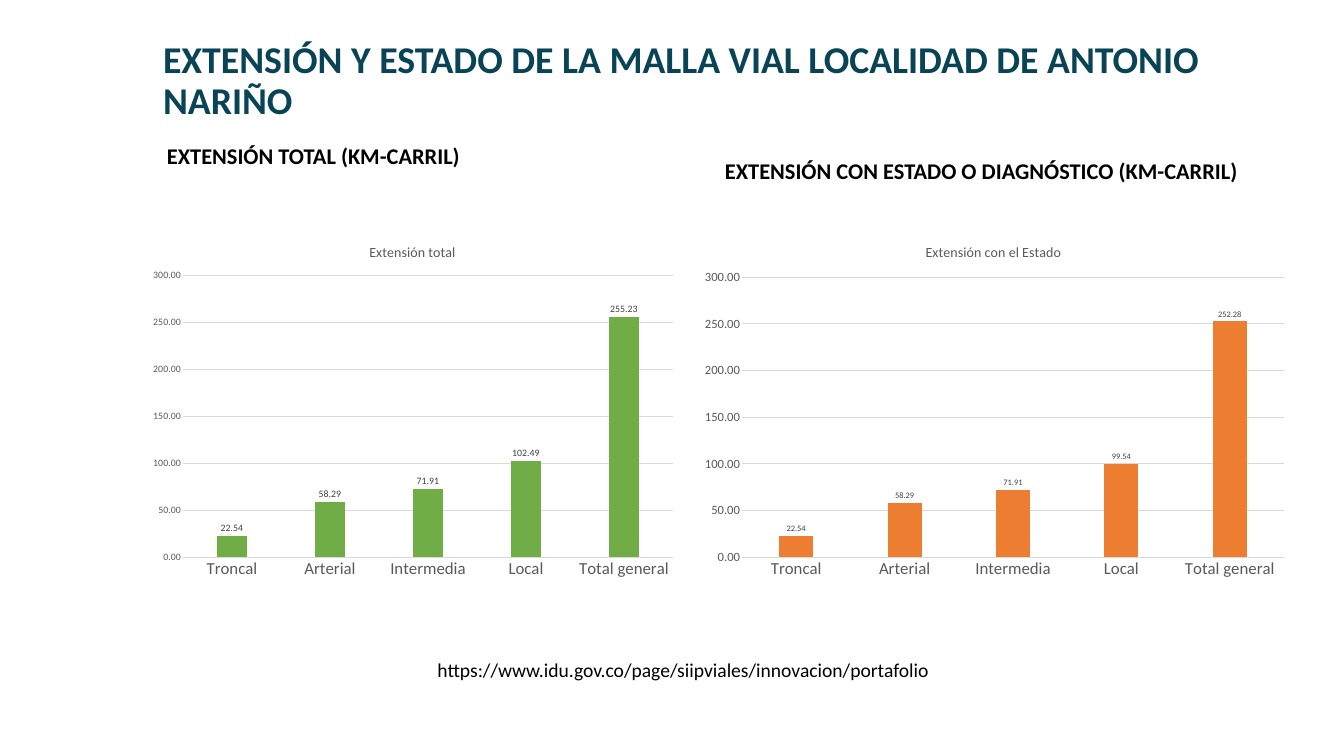
from lxml import etree
from pptx import Presentation
from pptx.chart.data import CategoryChartData
from pptx.dml.color import RGBColor
from pptx.enum.chart import XL_CHART_TYPE, XL_LABEL_POSITION, XL_TICK_MARK
from pptx.enum.text import MSO_ANCHOR, MSO_AUTO_SIZE, PP_ALIGN
from pptx.util import Emu, Pt

COLUMN = XL_CHART_TYPE.COLUMN_CLUSTERED
OUTSIDE = XL_LABEL_POSITION.OUTSIDE_END
NO_TICK = XL_TICK_MARK.NONE
MIDDLE, TOP = MSO_ANCHOR.MIDDLE, MSO_ANCHOR.TOP
LEFT, CENTER = PP_ALIGN.LEFT, PP_ALIGN.CENTER
NO_FIT = MSO_AUTO_SIZE.NONE

SCALE = 914400 / 50.4
SIZE = (1344, 756)
FORMAT = "#,##0.00"

THEME = {
    "font": "Calibri",
    "title": {"size": 54, "color": "094456", "bold": True},
    "head": {"size": 32, "color": "000000", "bold": True},
    "link": {"size": 28, "color": "000000", "bold": False},
    "name": {"size": 20, "color": "595959", "bold": False},
    "cats": {"size": 24, "color": "595959", "bold": False},
    "line": "D9D9D9",
    "scale": "595959",
    "label": "404040",
}

TITLE = ("EXTENSIÓN Y ESTADO DE LA MALLA VIAL LOCALIDAD DE ANTONIO NARIÑO",
         (158, 48, 1138, 68))
TEXTS = [
    ("EXTENSIÓN TOTAL (KM-CARRIL)", (162, 140, 352, 32), "head", LEFT),
    ("EXTENSIÓN CON ESTADO O DIAGNÓSTICO (KM-CARRIL)",
     (720, 155, 632, 32), "head", LEFT),
    ("https://www.idu.gov.co/page/siipviales/innovacion/portafolio",
     (311, 655, 744, 29), "link", CENTER),
]
CATS = ["Troncal", "Arterial", "Intermedia", "Local", "Total general"]
CHARTS = [
    {"name": "Extensión total", "vals": [22.54, 58.29, 71.91, 102.49, 255.23],
     "box": (142, 230, 541, 356), "plot": (183, 275, 490, 282),
     "fill": "70AD47", "scale": 14, "label": 14},
    {"name": "Extensión con el Estado", "vals": [22.54, 58.29, 71.91, 99.54, 252.28],
     "box": (692, 230, 603, 356), "plot": (742, 277, 542, 280),
     "fill": "ED7D31", "scale": 18, "label": 12},
]


def px(*vals):
    return [Emu(round(v * SCALE)) for v in vals]


def rgb(code):
    return RGBColor.from_string(code)


def style(font, size, color, bold=False):
    form = {"name": THEME["font"], "size": Pt(size), "bold": bold}
    for key, val in form.items():
        setattr(font, key, val)
    font.color.rgb = rgb(color)


def fill_text(frame, text, role, align, anchor):
    form = {"text": text, "word_wrap": True, "auto_size": NO_FIT,
            "vertical_anchor": anchor}
    for key, val in form.items():
        setattr(frame, key, val)
    para = frame.paragraphs[0]
    para.alignment = align
    style(para.runs[0].font, **THEME[role])
    return para


def draw_line(line):
    line.color.rgb = rgb(THEME["line"])
    line.width = Pt(0.75)


def pin_plot(chart, box, plot):
    """Fix the inner plot area as fractions of the chart box."""
    area = chart.plots[0]._element.getparent()
    space = etree.QName(area).namespace
    for old in area.findall(f"{{{space}}}layout"):
        area.remove(old)
    layout = etree.Element(f"{{{space}}}layout")
    manual = etree.SubElement(layout, f"{{{space}}}manualLayout")
    left, top, wide, high = box
    x, y, w, h = plot
    rules = {"layoutTarget": "inner", "xMode": "edge", "yMode": "edge",
             "x": (x - left) / wide, "y": (y - top) / high,
             "w": w / wide, "h": h / high}
    for tag, val in rules.items():
        etree.SubElement(manual, f"{{{space}}}{tag}").set("val", str(val))
    area.insert(0, layout)


def add_bars(slide, item):
    data = CategoryChartData(number_format=FORMAT)
    data.categories = CATS
    data.add_series(item["name"], item["vals"])
    chart = slide.shapes.add_chart(COLUMN, *px(*item["box"]), data).chart
    style(chart.font, 10, "000000")
    chart.has_legend = False
    chart.has_title = True
    frame = chart.chart_title.text_frame
    frame.text = item["name"]
    style(frame.paragraphs[0].runs[0].font, **THEME["name"])
    chart.chart_title.include_in_layout = False

    cats, scale = chart.category_axis, chart.value_axis
    for axis in (cats, scale):
        axis.major_tick_mark = axis.minor_tick_mark = NO_TICK
    style(cats.tick_labels.font, **THEME["cats"])
    draw_line(cats.format.line)
    style(scale.tick_labels.font, item["scale"], THEME["scale"])
    scale.format.line.fill.background()
    draw_line(scale.major_gridlines.format.line)
    for key, val in {"minimum_scale": 0, "maximum_scale": 300, "major_unit": 50}.items():
        setattr(scale, key, val)

    bars = chart.plots[0]
    form = {"gap_width": 219, "overlap": -27, "vary_by_categories": False,
            "has_data_labels": True}
    for key, val in form.items():
        setattr(bars, key, val)
    fill = bars.series[0].format.fill
    fill.solid()
    fill.fore_color.rgb = rgb(item["fill"])
    labels = bars.data_labels
    form = {"show_value": True, "position": OUTSIDE, "number_format": FORMAT}
    for key, val in form.items():
        setattr(labels, key, val)
    style(labels.font, item["label"], THEME["label"])
    for part in (scale.tick_labels, labels):
        part.number_format = FORMAT
        part.number_format_is_linked = False
    pin_plot(chart, item["box"], item["plot"])


def main():
    deck = Presentation()
    deck.slide_width, deck.slide_height = px(*SIZE)
    slide = deck.slides.add_slide(deck.slide_layouts[5])
    text, box = TITLE
    title = slide.shapes.title
    for key, val in zip(("left", "top", "width", "height"), px(*box)):
        setattr(title, key, val)
    fill_text(title.text_frame, text, "title", LEFT, MIDDLE).line_spacing = 0.9
    for text, box, role, align in TEXTS:
        frame = slide.shapes.add_textbox(*px(*box)).text_frame
        fill_text(frame, text, role, align, TOP)
    for item in CHARTS:
        add_bars(slide, item)
    deck.save("out.pptx")


if __name__ == "__main__":
    main()
